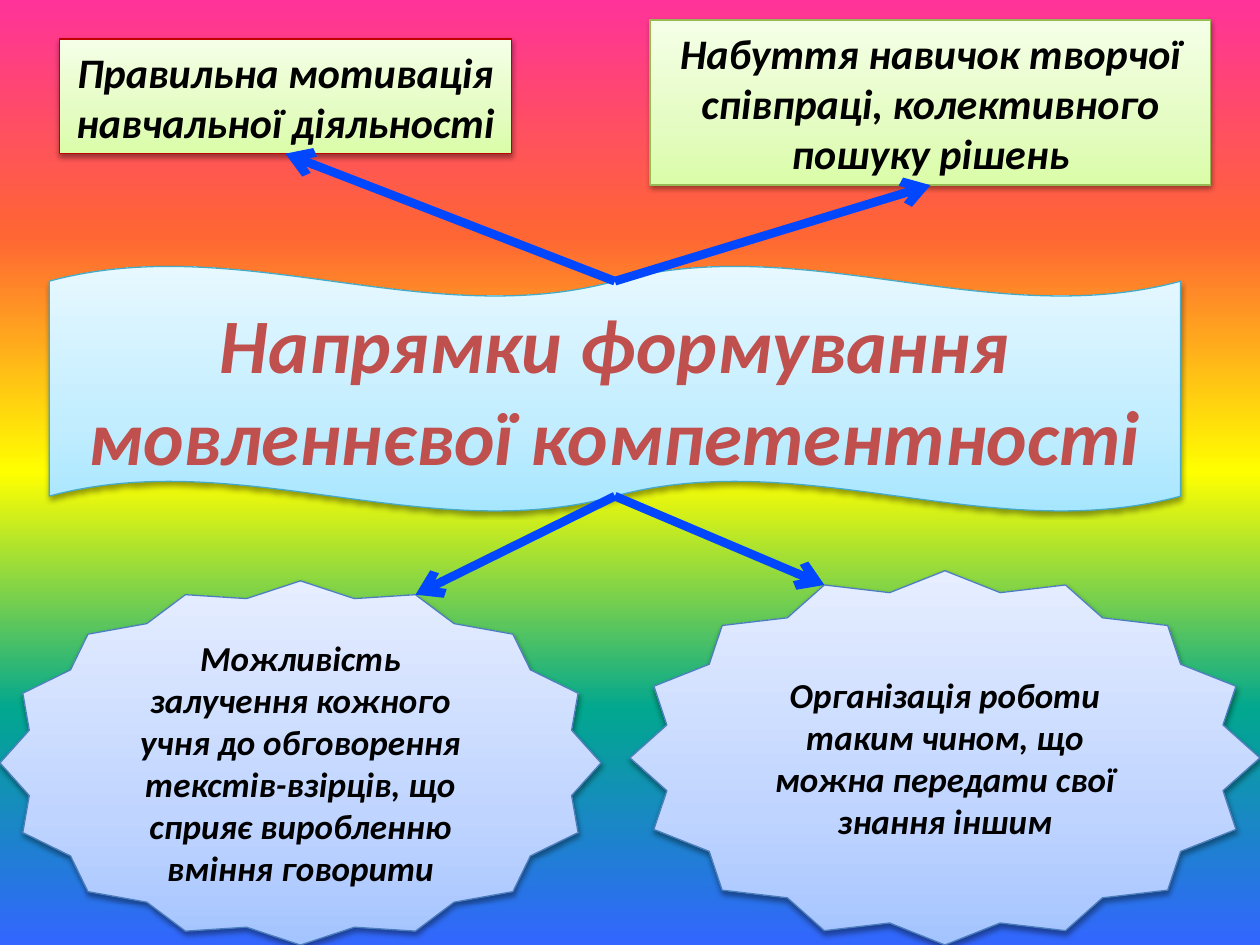
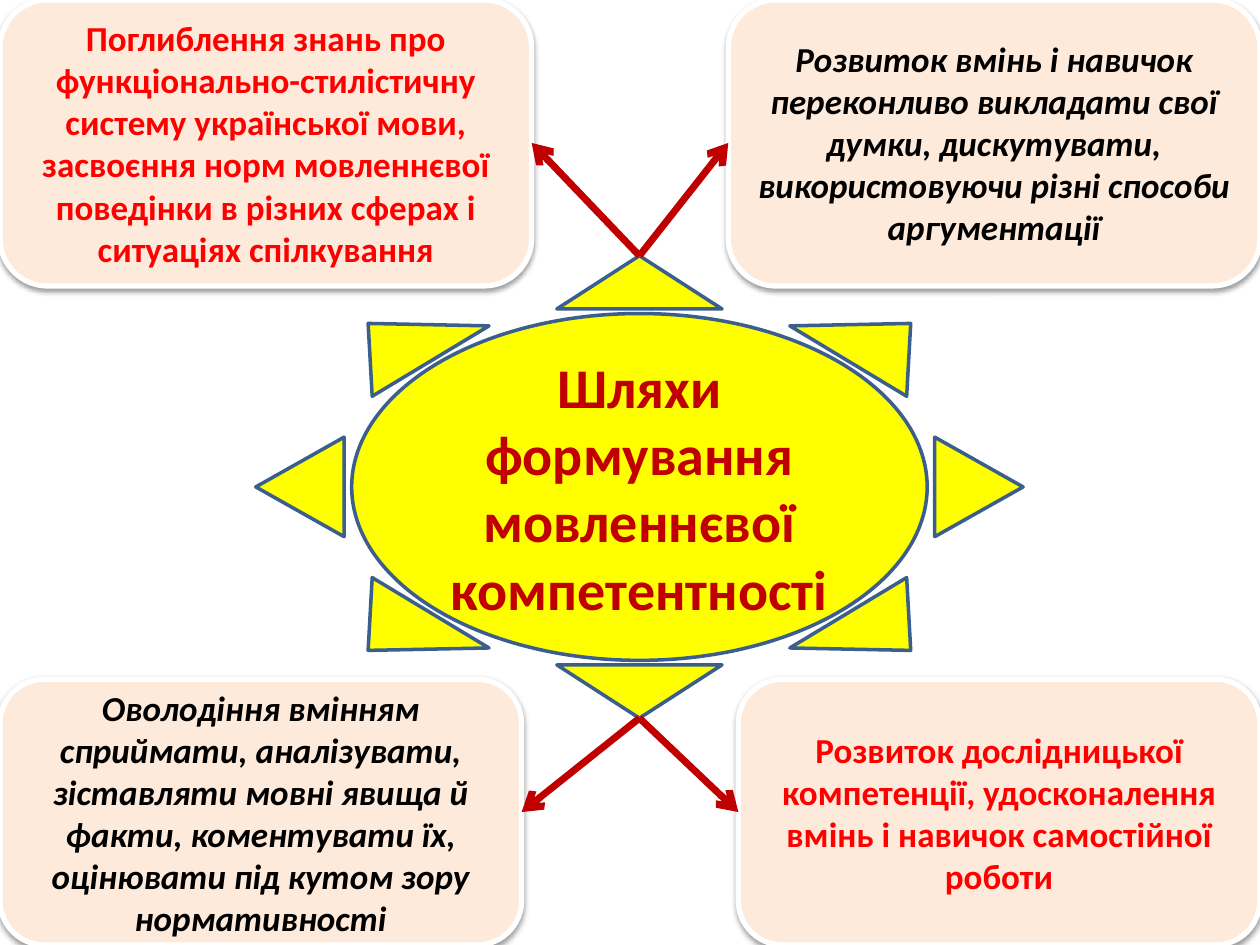
import math
from collections import namedtuple
from dataclasses import dataclass

from lxml import etree
from pptx import Presentation
from pptx import util as u
from pptx.dml.color import RGBColor
from pptx.enum import shapes, text
from pptx.oxml.ns import qn

WIDTH, HEIGHT = 10, 7.5
TITLE_ONLY = 5
BOTTOM, LEFT, RIGHT = 2, 1, 3

Box = namedtuple("Box", "left top width height")
Gradient = namedtuple("Gradient", "angle stops")
Look = namedtuple("Look", "preset fill line line_width size color italic adjust shadow",
                  defaults=(None, None, False, None, True))
Arrow = namedtuple("Arrow", "color width")


def office_gradient(dark, middle, light):
    """Vertical gradient that lightens towards the top."""
    return Gradient(90, [(0, dark), (35, middle), (100, light)])


@dataclass(frozen=True)
class Theme:
    font = "Calibri"
    black, red, dark_red, brick = "000000", "FF0000", "C00000", "C0504D"
    rainbow = Gradient(270, [(0, "FF3399"), (25, "FF6633"), (50, "FFFF00"),
                             (75, "01A78F"), (100, "3366FF")])
    green = office_gradient("DAFDA7", "E4FCC2", "F5FFE7")
    blue = office_gradient("A4C4FF", "BFD4FF", "E6EEFF")
    aqua = office_gradient("A7E6FF", "C1EDFF", "E7F8FF")
    peach, white, yellow = "FDEADA", "FFFFFF", "FFFF00"
    blue_arrow = Arrow("0047FF", 5)
    red_arrow = Arrow(dark_red, 4)


THEME = Theme()
PRESET = shapes.MSO_SHAPE

WAVE = Look(PRESET.DOUBLE_WAVE, THEME.aqua, "46AAC5", 0.75, 44, THEME.brick, True)
SUN = Look(PRESET.SUN, THEME.yellow, "3A5F8C", 2, 32, THEME.dark_red,
           adjust=0.125, shadow=False)
RED_EDGE = Look(PRESET.RECTANGLE, THEME.green, THEME.dark_red, 0.75, 24, THEME.black, True)
GREEN_EDGE = RED_EDGE._replace(line="98B955")
STAR = Look(PRESET.STAR_16_POINT, THEME.blue, "4B7EBC", 0.75, 20, THEME.black, True, 0.46)
WIDE_STAR = STAR._replace(adjust=0.45)
RED_CARD = Look(PRESET.ROUNDED_RECTANGLE, THEME.peach, THEME.white, 3, 20, THEME.red)
BLACK_CARD = RED_CARD._replace(color=THEME.black, italic=True)


def corner(width, height, right=False, bottom=False):
    """Box of the given size pushed into a corner of the slide."""
    return Box(WIDTH - width if right else 0, HEIGHT - height if bottom else 0, width, height)


UPPER_CARD, LOWER_CARD = (4.22, 2.27), (4.14, 2.11)

# Each branch: text, box, look, connection site (None: the star point nearest the hub)
SLIDES = [
    dict(
        background=THEME.rainbow,
        title="Напрямки формування мовленнєвої компетентності",
        hub=Box(0.39, 2.11, 8.98, 1.95), look=WAVE,
        title_share=(1, 1), dip=1 / 16, arrow=THEME.blue_arrow,
        branches=[
            ("Правильна мотивація навчальної діяльності",
             Box(0.47, 0.31, 3.59, 0.91), RED_EDGE, BOTTOM),
            ("Організація роботи таким чином, що можна передати свої знання іншим",
             corner(5, 2.97, right=True, bottom=True), WIDE_STAR, None),
            ("Можливість залучення кожного учня до обговорення текстів-взірців, "
             "що сприяє виробленню вміння говорити",
             corner(4.77, 2.89, bottom=True), STAR, None),
            ("Набуття навичок творчої співпраці, колективного пошуку рішень",
             Box(5.16, 0.16, 4.45, 1.31), GREEN_EDGE, BOTTOM),
        ]),
    dict(
        background=THEME.white,
        title="Шляхи формування мовленнєвої компетентності",
        hub=Box(2.03, 2.03, 6.09, 3.67), look=SUN,
        title_share=(0.53, 0.66), dip=0, arrow=THEME.red_arrow,
        branches=[
            ("Поглиблення знань про функціонально-стилістичну систему української мови, "
             "засвоєння норм мовленнєвої поведінки в різних сферах і ситуаціях спілкування",
             corner(*UPPER_CARD), RED_CARD, RIGHT),
            ("Розвиток вмінь і навичок переконливо викладати свої думки, дискутувати, "
             "використовуючи різні способи аргументації",
             corner(*UPPER_CARD, right=True), BLACK_CARD, LEFT),
            ("Розвиток дослідницької компетенції, удосконалення вмінь і навичок "
             "самостійної роботи",
             corner(*LOWER_CARD, right=True, bottom=True), RED_CARD, LEFT),
            ("Оволодіння вмінням сприймати, аналізувати, зіставляти мовні явища й факти, "
             "коментувати їх, оцінювати під кутом зору нормативності",
             corner(*LOWER_CARD, bottom=True), BLACK_CARD, RIGHT),
        ]),
]


def inches(values):
    return [u.Inches(value) for value in values]


def center(box):
    return box.left + box.width / 2, box.top + box.height / 2


def paint(fill, element, color):
    """Fill with a plain colour or a Gradient; element holds the fill's XML."""
    if not isinstance(color, Gradient):
        fill.solid()
        fill.fore_color.rgb = RGBColor.from_string(color)
        return
    fill.gradient()
    fill.gradient_angle = color.angle
    stop_list = next(element.iter(qn("a:gsLst")))
    for stop in list(stop_list):
        stop_list.remove(stop)
    for position, value in color.stops:
        stop = etree.SubElement(stop_list, qn("a:gs"), pos=str(position * 1000))
        etree.SubElement(stop, qn("a:srgbClr"), val=value)


def draw_line(line, color, width):
    line.color.rgb = RGBColor.from_string(color)
    line.width = u.Pt(width)


def add_shadow(shape):
    effects = shape._element.spPr.find(qn("a:effectLst"))
    shadow = etree.SubElement(effects, qn("a:outerShdw"), blurRad=str(u.Pt(3.1)),
                              dist=str(u.Pt(1.6)), dir="5400000", rotWithShape="0")
    color = etree.SubElement(shadow, qn("a:srgbClr"), val=THEME.black)
    etree.SubElement(color, qn("a:alpha"), val="38000")


def write(shape, words, look):
    frame = shape.text_frame
    frame.word_wrap = True
    frame.auto_size = text.MSO_AUTO_SIZE.NONE
    frame.vertical_anchor = text.MSO_ANCHOR.MIDDLE
    paragraph = frame.paragraphs[0]
    paragraph.alignment = text.PP_ALIGN.CENTER
    run = paragraph.add_run()
    run.text = words
    font = run.font
    font.name, font.size = THEME.font, u.Pt(look.size)
    font.bold, font.italic = True, look.italic
    font.color.rgb = RGBColor.from_string(look.color)


def add_figure(slide, box, look):
    shape = slide.shapes.add_shape(look.preset, *inches(box))
    if look.adjust is not None:
        shape.adjustments[0] = look.adjust
    paint(shape.fill, shape._element.spPr, look.fill)
    draw_line(shape.line, look.line, look.line_width)
    shape.shadow.inherit = False
    if look.shadow:
        add_shadow(shape)
    return shape


def place_title(slide, content):
    """Put the title placeholder over the middle of the hub."""
    hub, title = content["hub"], slide.shapes.title
    width, height = (size * share for size, share in zip(hub[2:], content["title_share"]))
    x, y = center(hub)
    title.left, title.top, title.width, title.height = inches(
        (x - width / 2, y - height / 2, width, height))
    write(title, content["title"], content["look"])
    add_figure(slide, hub, content["look"])._element.addnext(title._element)


def star_point(box, hub_x):
    """Upper point of a 16-point star, one step from its top towards the hub."""
    x, y = center(box)
    step = math.copysign(math.pi / 8, hub_x - x)
    return x + math.sin(step) * box.width / 2, y - math.cos(step) * box.height / 2


def add_arrow(slide, content, shape, box, site):
    hub, (hub_x, hub_y) = content["hub"], center(content["hub"])
    dip = hub.height * content["dip"]
    above = center(box)[1] < hub_y
    start = (hub_x, hub.top + dip if above else hub.top + hub.height - dip)
    end = star_point(box, hub_x) if site is None else center(box)
    connector = slide.shapes.add_connector(shapes.MSO_CONNECTOR.STRAIGHT,
                                           *inches(start + end))
    if site is not None:
        connector.end_connect(shape, site)
    draw_line(connector.line, *content["arrow"])
    etree.SubElement(connector.line._get_or_add_ln(), qn("a:tailEnd"), type="arrow")
    etree.SubElement(connector._element.spPr, qn("a:effectLst"))


def build_slide(presentation, content):
    slide = presentation.slides.add_slide(presentation.slide_layouts[TITLE_ONLY])
    paint(slide.background.fill, slide._element, content["background"])
    place_title(slide, content)
    figures = []
    for words, box, look, site in content["branches"]:
        shape = add_figure(slide, box, look)
        write(shape, words, look)
        figures.append((shape, box, site))
    for figure in figures:
        add_arrow(slide, content, *figure)


def main():
    presentation = Presentation()
    presentation.slide_width, presentation.slide_height = inches((WIDTH, HEIGHT))
    for content in SLIDES:
        build_slide(presentation, content)
    presentation.save("out.pptx")


if __name__ == "__main__":
    main()
